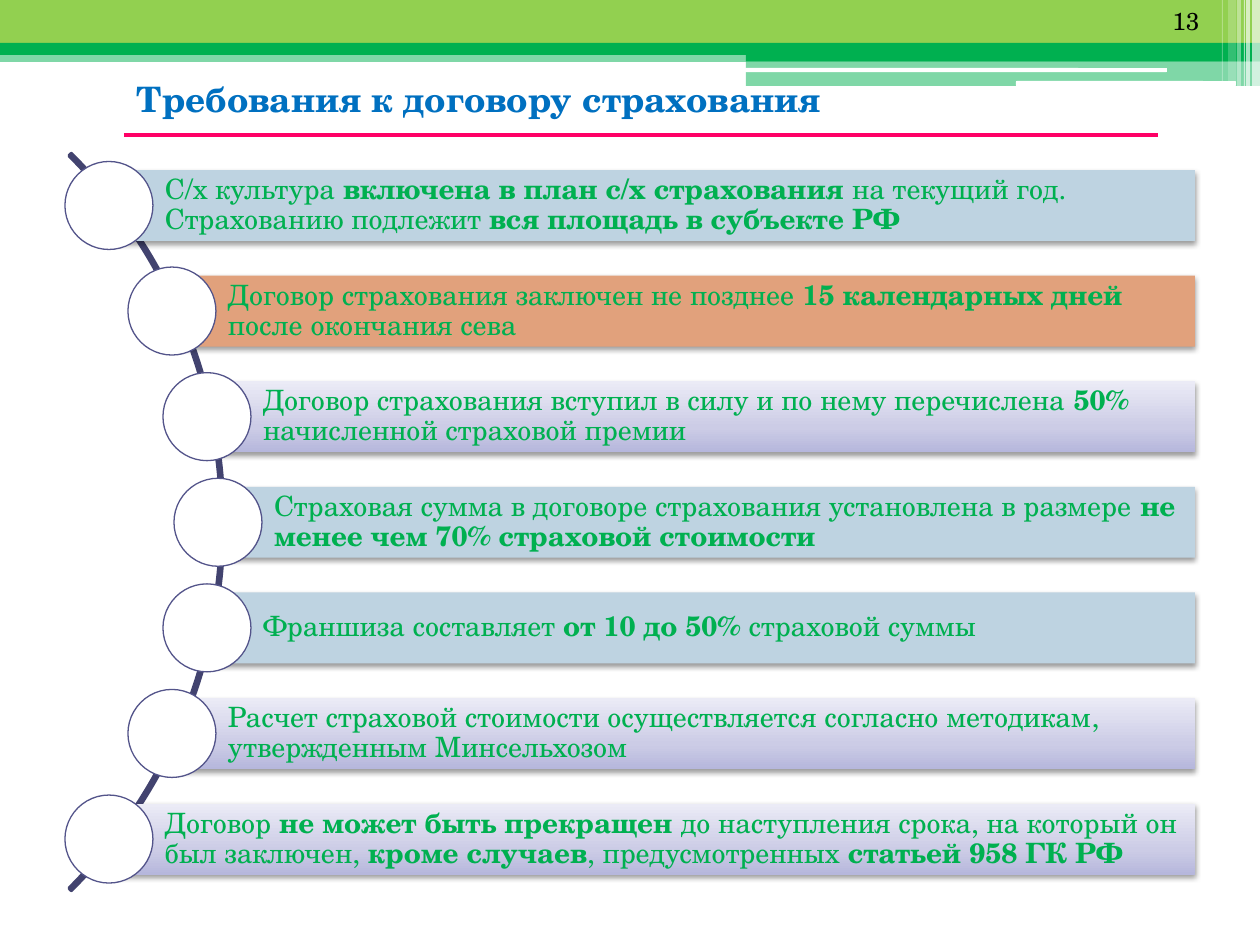
from lxml.etree import SubElement
from copy import deepcopy
from pptx import Presentation
from pptx.dml.color import RGBColor
from pptx.enum.shapes import MSO_CONNECTOR, MSO_SHAPE
from pptx.enum.text import MSO_ANCHOR, MSO_AUTO_SIZE, PP_ALIGN
from pptx.oxml.ns import qn
from pptx.util import Emu, Pt

FONT = "TeX Gyre Schola"
COLORS = {
    "lime": "92D050", "green": "00B050", "white": "FFFFFF", "black": "000000",
    "title": "0070C0", "rule": "FF0066", "arc": "42436F", "ring": "53548A",
    "blue": "BED3E1", "orange": "E1A17C",
}
LILAC_STOPS = [(0, "B6B7DC"), (0.35, "CCCCE6"), (1, "EBEBF6")]

# left, top, width, height, colour, opacity in percent
HEADER_BANDS = [
    (0, 50, 1260, 12, "green", 50),
    (0, 0, 1260, 43, "lime", 100),
    (0, 43, 1260, 12, "green", 100),
    (746, 49, 514, 12, "green", 100),
    (746, 61, 514, 25, "green", 50),
]
HEADER_SLOTS = [(745, 68, 422, 4), (1016, 81, 220, 5)]
# left, width, height, opacity in percent
HEADER_STRIPES = [
    (1252, 8, 86, 65), (1246, 4, 86, 65), (1244, 1, 86, 60),
    (1237, 4, 86, 40), (1228, 8, 81, 20), (1222, 1, 81, 30),
]

# Bar fill, then text parts: regular and bold in turn
REQUIREMENTS = [
    ("blue", ["С/х культура ", "включена в план с/х страхования ",
              "на текущий год. Страхованию подлежит ", "вся площадь в субъекте РФ"]),
    ("orange", ["Договор страхования заключен не позднее ", "15 календарных дней",
                " после окончания сева"]),
    ("lilac", ["Договор страхования вступил в силу и по нему перечислена ", "50% ",
               "начисленной страховой премии"]),
    ("blue", ["Страховая сумма в договоре страхования установлена в размере ",
              "не менее чем 70% страховой стоимости"]),
    ("blue", ["Франшиза составляет ", "от 10 до 50%", " страховой суммы"]),
    ("lilac", ["Расчет страховой стоимости осуществляется согласно методикам, "
               "утвержденным Минсельхозом"]),
    ("lilac", ["Договор ", "не может быть прекращен ",
               "до наступления срока, на который он был заключен, ", "кроме случаев",
               ", предусмотренных ", "статьей 958 ГК РФ"]),
]
CENTERS_X = [109, 172, 207, 218, 207, 172, 109]
FIRST_Y, PITCH = 205.5, 105.6
BAR_RIGHT, BAR_HEIGHT, CIRCLE = 1195, 71, 88


def px(length):
    return Emu(round(length * 914400 / 126))


def color(name):
    return RGBColor.from_string(COLORS[name])


def add_block(slide, kind, box, fill=None, opacity=100, line=None, line_width=1):
    block = slide.shapes.add_shape(kind, *map(px, box))
    block.shadow.inherit = False
    if fill:
        block.fill.solid()
        block.fill.fore_color.rgb = color(fill)
    else:
        block.fill.background()
    if opacity < 100:
        tone = block._element.spPr.find(".//" + qn("a:srgbClr"))
        SubElement(tone, qn("a:alpha"), val=str(opacity * 1000))
    if line:
        block.line.color.rgb = color(line)
        block.line.width = Pt(line_width)
    else:
        block.line.fill.background()
    return block


def fill_lilac(bar):
    bar.fill.gradient()
    bar.fill.gradient_angle = 90
    stops = bar._element.spPr.find(".//" + qn("a:gsLst"))
    stops.append(deepcopy(stops[-1]))
    for stop, (position, tone) in zip(bar.fill.gradient_stops, LILAC_STOPS):
        stop.position = position
        stop.color.rgb = RGBColor.from_string(tone)


def add_soft_shadow(bar):
    effects = bar._element.spPr.find(qn("a:effectLst"))
    shadow = SubElement(effects, qn("a:outerShdw"), blurRad=str(Pt(3.1)),
                        dist=str(Pt(1.6)), dir="5400000", rotWithShape="0")
    tone = SubElement(shadow, qn("a:srgbClr"), val=COLORS["black"])
    SubElement(tone, qn("a:alpha"), val="38000")


def style_font(font, size, tone, bold=False):
    font.name = FONT
    font.size = Pt(size)
    font.bold = bold
    font.color.rgb = color(tone)


def add_label(slide, box, text, size, tone, bold=False):
    frame = slide.shapes.add_textbox(*map(px, box)).text_frame
    frame.word_wrap = True
    frame.text = text
    style_font(frame.paragraphs[0].runs[0].font, size, tone, bold)
    return frame


def add_rule(slide, left, right, y):
    rule = slide.shapes.add_connector(MSO_CONNECTOR.STRAIGHT, px(left), px(y), px(right), px(y))
    rule.line.color.rgb = color("rule")
    rule.line.width = Pt(2.5)
    SubElement(rule._element.spPr, qn("a:effectLst"))


def add_header(slide):
    for *box, tone, opacity in HEADER_BANDS:
        add_block(slide, MSO_SHAPE.RECTANGLE, box, tone, opacity)
    for box in HEADER_SLOTS:
        add_block(slide, MSO_SHAPE.ROUNDED_RECTANGLE, box, "white")
    for left, width, height, opacity in HEADER_STRIPES:
        add_block(slide, MSO_SHAPE.RECTANGLE, (left, 0, width, height), "white", opacity)


def add_arc(slide):
    arc = add_block(slide, MSO_SHAPE.BLOCK_ARC, (-818, 1, 1042, 1042), line="arc", line_width=2)
    # Start and end angles of 315 and 45 degrees, then the thickness
    for index, value in enumerate((189, 27, 0.003)):
        arc.adjustments[index] = value


def add_requirement(slide, center_x, center_y, fill, parts):
    bar_box = (center_x, center_y - BAR_HEIGHT / 2, BAR_RIGHT - center_x, BAR_HEIGHT)
    bar = add_block(slide, MSO_SHAPE.RECTANGLE, bar_box, COLORS.get(fill) and fill)
    if fill == "lilac":
        fill_lilac(bar)
    add_soft_shadow(bar)

    frame = bar.text_frame
    frame.word_wrap = True
    frame.vertical_anchor = MSO_ANCHOR.MIDDLE
    frame.margin_left = px(56)
    frame.margin_top = frame.margin_right = frame.margin_bottom = px(5)
    paragraph = frame.paragraphs[0]
    paragraph.alignment = PP_ALIGN.LEFT
    paragraph.line_spacing = 0.9
    for index, part in enumerate(parts):
        run = paragraph.add_run()
        run.text = part
        style_font(run.font, 16, "green", bold=index % 2 == 1)

    circle_box = (center_x - CIRCLE / 2, center_y - CIRCLE / 2, CIRCLE, CIRCLE)
    add_block(slide, MSO_SHAPE.OVAL, circle_box, "white", line="ring", line_width=0.75)


def main():
    deck = Presentation()
    deck.slide_width, deck.slide_height = px(1260), px(945)
    slide = deck.slides.add_slide(deck.slide_layouts[6])

    # Header and title
    add_header(slide)
    add_rule(slide, 124, 1158, 135)
    title = add_label(slide, (124, 71, 1111, 55), "Требования к договору страхования",
                      20, "title", bold=True)
    title.auto_size = MSO_AUTO_SIZE.SHAPE_TO_FIT_TEXT

    # Requirements along the arc
    add_arc(slide)
    for row, (center_x, (fill, parts)) in enumerate(zip(CENTERS_X, REQUIREMENTS)):
        add_requirement(slide, center_x, FIRST_Y + row * PITCH, fill, parts)

    # Page number
    add_label(slide, (1160, 0, 64, 35), "13", 14, "black")
    deck.save("out.pptx")


if __name__ == "__main__":
    main()
